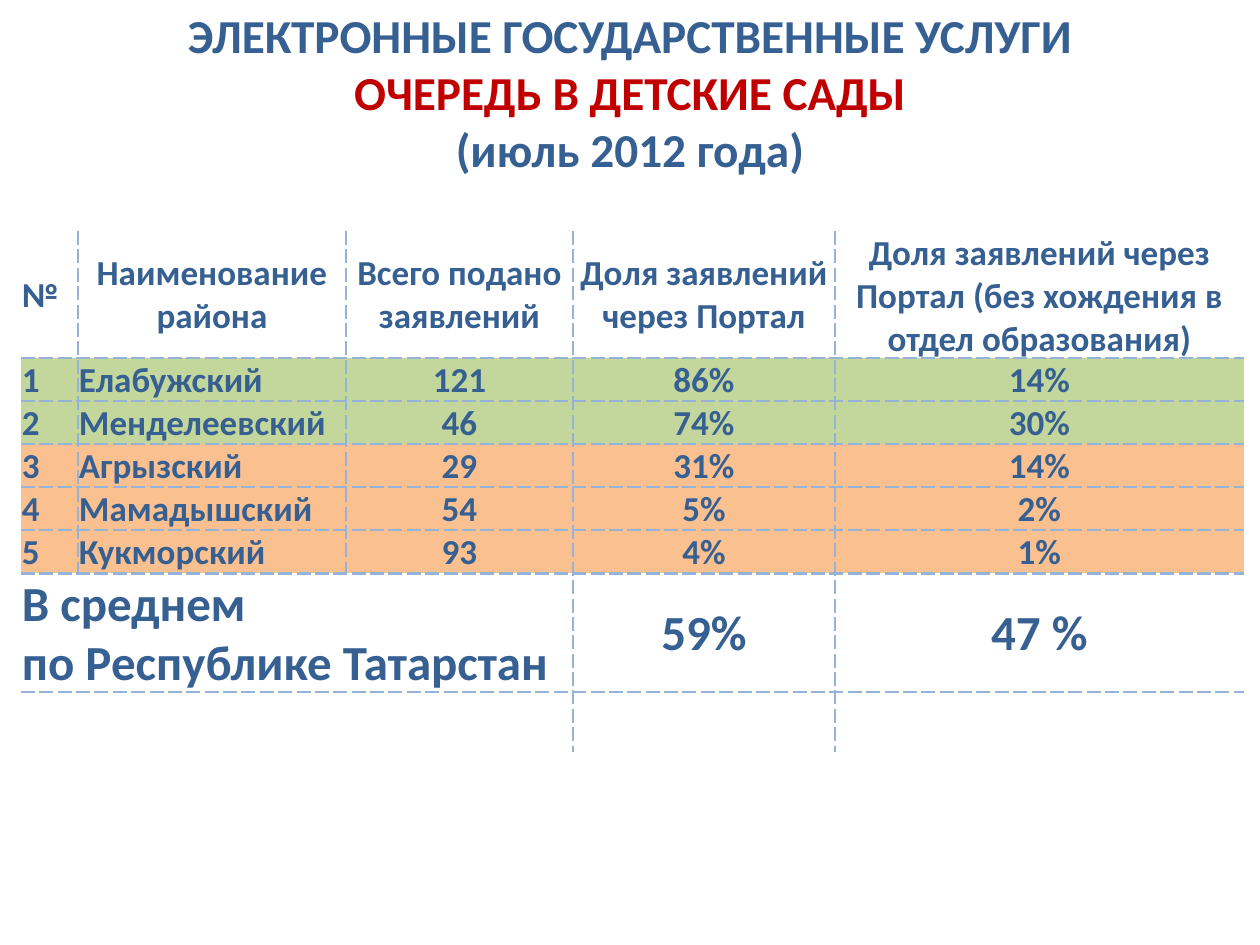
from collections import namedtuple
from dataclasses import dataclass

from lxml.etree import SubElement
from pptx import Presentation
from pptx.dml.color import RGBColor as Rgb
from pptx.enum.text import MSO_ANCHOR as Anchor, MSO_AUTO_SIZE as AutoSize, PP_ALIGN as Align
from pptx.oxml.ns import qn
from pptx.util import Emu, Pt

Box = namedtuple("Box", "left top width height")


@dataclass(frozen=True)
class Theme:
    font: str = "Calibri"
    text: str = "376092"
    accent: str = "C00000"
    line: str = "95B3D7"
    high: str = "C3D69B"
    low: str = "FAC090"
    title_size: int = 27
    cell_size: int = 20
    total_size: int = 28
    line_width: float = 1.5


THEME = Theme()
PX_PER_INCH = 126
NO_STYLE = "{2D5ABB26-0587-4C30-8999-92F81FD0307C}"

TITLE = [
    ("ЭЛЕКТРОННЫЕ ГОСУДАРСТВЕННЫЕ УСЛУГИ", THEME.text),
    ("ОЧЕРЕДЬ В ДЕТСКИЕ САДЫ", THEME.accent),
    ("(июль 2012 года)", THEME.text),
]
HEADER = ["№", "Наименование района", "Всего подано заявлений", "Доля заявлений через Портал",
          "Доля заявлений через Портал (без хождения в отдел образования)"]
DISTRICTS = [
    ("1", "Елабужский", "121", "86%", "14%"),
    ("2", "Менделеевский", "46", "74%", "30%"),
    ("3", "Агрызский", "29", "31%", "14%"),
    ("4", "Мамадышский", "54", "5%", "2%"),
    ("5", "Кукморский", "93", "4%", "1%"),
]
HIGH_COUNT = 2
TOTAL = ["В среднем\nпо Республике Татарстан", "", "", "59%", "47 %"]
COLUMN_WIDTHS = [57, 268, 227, 262, 409]
ROW_HEIGHTS = [127] + [43] * len(DISTRICTS) + [119, 60]
MERGED_COLUMNS = 3


def px(length):
    return Emu(round(length * 914400 / PX_PER_INCH))


def add_run(para, text, size, color):
    span = para.add_run()
    span.text = text
    font = span.font
    font.name, font.size, font.bold = THEME.font, Pt(size), True
    font.color.rgb = Rgb.from_string(color)


def add_title(page, box):
    title = page.shapes.title
    title.left, title.top, title.width, title.height = map(px, box)
    frame = title.text_frame
    frame.word_wrap = True
    frame.auto_size = AutoSize.SHAPE_TO_FIT_TEXT
    frame.vertical_anchor = Anchor.TOP
    for index, (text, color) in enumerate(TITLE):
        para = frame.add_paragraph() if index else frame.paragraphs[0]
        para.alignment = Align.CENTER
        add_run(para, text, THEME.title_size, color)


def set_borders(cell, sides):
    """Draw a dashed line on the named sides and none on the others."""
    properties = cell._tc.get_or_add_tcPr()
    for side in "LRTB":
        line = SubElement(properties, qn(f"a:ln{side}"), w=str(Pt(THEME.line_width)))
        if side in sides:
            fill = SubElement(line, qn("a:solidFill"))
            SubElement(fill, qn("a:srgbClr"), val=THEME.line)
            SubElement(line, qn("a:prstDash"), val="sysDash")
        else:
            SubElement(line, qn("a:noFill"))


def inner_sides(row, column, merged):
    """Name the sides of a cell that lie inside the table."""
    last_row, last_column = len(ROW_HEIGHTS) - 1, len(COLUMN_WIDTHS) - 1
    sides = ("T" if row > 0 else "") + ("B" if row < last_row else "")
    if merged and column < MERGED_COLUMNS:
        return sides + ("" if column == 1 else "R")
    return sides + ("L" if column > 0 else "") + ("R" if column < last_column else "")


def fill_cell(cell, text, size, alignment, anchor):
    cell.margin_left = cell.margin_right = cell.margin_top = px(1)
    cell.margin_bottom = 0
    cell.vertical_anchor = anchor
    if not text:
        return
    frame = cell.text_frame
    for index, words in enumerate(text.split("\n")):
        para = frame.add_paragraph() if index else frame.paragraphs[0]
        para.alignment = alignment
        add_run(para, words, size, THEME.text)


def add_queue_table(page, box):
    rows = [HEADER, *DISTRICTS, TOTAL, [""] * len(HEADER)]
    total_row = len(DISTRICTS) + 1
    table = page.shapes.add_table(len(rows), len(HEADER), *map(px, box)).table
    table.first_row = table.horz_banding = False
    table._tbl.tblPr.find(qn("a:tableStyleId")).text = NO_STYLE
    for column, width in zip(table.columns, COLUMN_WIDTHS):
        column.width = px(width)
    for row, height in zip(table.rows, ROW_HEIGHTS):
        row.height = px(height)

    # The average and the empty row join their first columns
    for row in range(total_row, len(rows)):
        table.cell(row, 0).merge(table.cell(row, MERGED_COLUMNS - 1))

    for row, texts in enumerate(rows):
        is_district = 0 < row < total_row
        size = THEME.total_size if row == total_row else THEME.cell_size
        for column, text in enumerate(texts):
            cell = table.cell(row, column)
            left = column == 0 or (is_district and column == 1)
            anchor = Anchor.BOTTOM if is_district and column == 1 else Anchor.MIDDLE
            fill_cell(cell, text, size, Align.LEFT if left else Align.CENTER, anchor)
            set_borders(cell, inner_sides(row, column, row >= total_row))
            if is_district:
                cell.fill.solid()
                color = THEME.high if row <= HIGH_COUNT else THEME.low
                cell.fill.fore_color.rgb = Rgb.from_string(color)
            else:
                cell.fill.background()


def main():
    deck = Presentation()
    deck.slide_width, deck.slide_height = px(1260), px(945)
    page = deck.slides.add_slide(deck.slide_layouts[5])  # title only
    add_title(page, Box(0, 0, 1260, 184))
    add_queue_table(page, Box(21, 231, sum(COLUMN_WIDTHS), sum(ROW_HEIGHTS)))
    deck.save("out.pptx")


if __name__ == "__main__":
    main()
